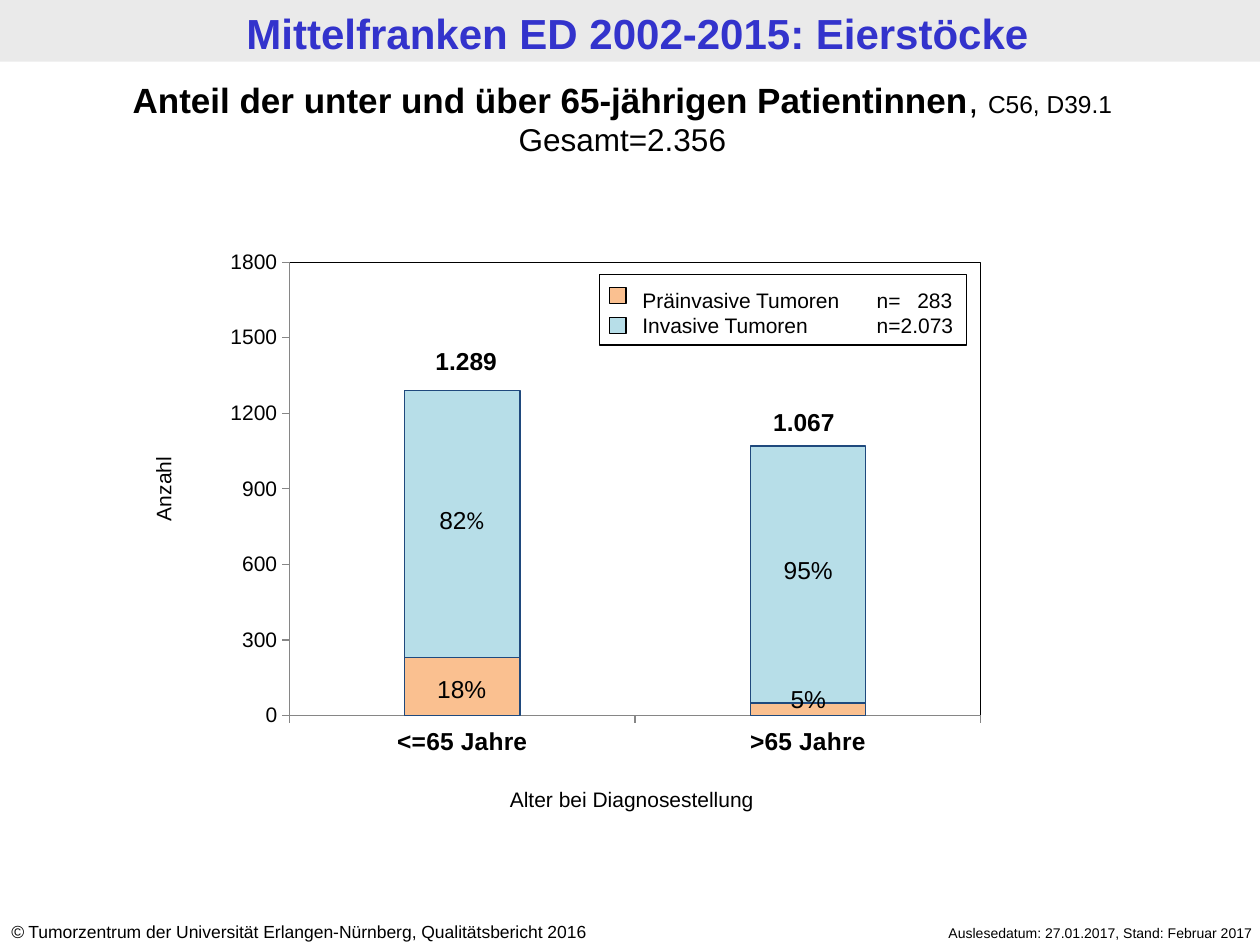
from dataclasses import dataclass

from pptx import Presentation
from pptx import util as u
from pptx.chart.data import CategoryChartData
from pptx.dml.color import RGBColor
from pptx.enum import chart, shapes, text
from pptx.oxml import parse_xml
from pptx.oxml.ns import nsdecls, qn

LEFT, CENTER, RIGHT = text.PP_ALIGN.LEFT, text.PP_ALIGN.CENTER, text.PP_ALIGN.RIGHT


@dataclass(frozen=True)
class Theme:
    font: str = "Arial"
    chart_font: str = "Calibri"
    ink: str = "000000"
    title: str = "3333CC"
    band: str = "EAEAEA"
    axis: str = "868686"
    bar_line: str = "1F497D"
    preinvasive: str = "FAC090"
    invasive: str = "B7DEE8"
    title_size: int = 24
    heading_size: int = 20
    total_size: int = 18
    label_size: int = 14
    small_size: int = 12
    footer_size: int = 10
    date_size: int = 8
    line_width: float = 0.75


class SlideBuilder:
    def __init__(self, slide, theme):
        self.slide, self.theme = slide, theme

    @staticmethod
    def inches(*lengths):
        return [u.Inches(length) for length in lengths]

    def outline(self, line, color):
        line.color.rgb = RGBColor.from_string(color)
        line.width = u.Pt(self.theme.line_width)

    def style_font(self, font, size, color=None, bold=False, italic=False, name=None):
        font.name = name or self.theme.font
        font.size = u.Pt(size)
        font.bold, font.italic = bold, italic
        font.color.rgb = RGBColor.from_string(color or self.theme.ink)

    def box(self, *place, fill=None, line=None):
        rect = self.slide.shapes.add_shape(shapes.MSO_SHAPE.RECTANGLE, *self.inches(*place))
        rect.shadow.inherit = False
        if fill:
            rect.fill.solid()
            rect.fill.fore_color.rgb = RGBColor.from_string(fill)
        else:
            rect.fill.background()
        if line:
            self.outline(rect.line, line)
        else:
            rect.line.fill.background()

    def text(self, place, paragraphs, align=CENTER, rotation=0, tabs=()):
        """Each paragraph is a list of (words, font options) runs."""
        holder = self.slide.shapes.add_textbox(*self.inches(*place))
        holder.rotation = rotation
        frame = holder.text_frame
        frame.word_wrap = True
        frame.auto_size = text.MSO_AUTO_SIZE.SHAPE_TO_FIT_TEXT
        for index, runs in enumerate(paragraphs):
            paragraph = frame.add_paragraph() if index else frame.paragraphs[0]
            paragraph.alignment = align
            if tabs:
                stops = "".join(f'<a:tab pos="{u.Inches(at)}" algn="{side}"/>' for at, side in tabs)
                paragraph._p.get_or_add_pPr().append(
                    parse_xml(f'<a:tabLst {nsdecls("a")}>{stops}</a:tabLst>'))
            for words, options in runs:
                run = paragraph.add_run()
                run.text = words
                self.style_font(run.font, **options)

    def stacked_columns(self, place, categories, series, maximum, step, layout):
        data = CategoryChartData()
        data.categories = categories
        for name, values, _ in series:
            data.add_series(name, values)
        columns = self.slide.shapes.add_chart(
            chart.XL_CHART_TYPE.COLUMN_STACKED, *self.inches(*place), data).chart
        columns.has_legend = columns.has_title = False
        self.style_font(columns.font, self.theme.total_size, name=self.theme.chart_font)

        plot = columns.plots[0]
        plot.gap_width, plot.overlap = 200, 100
        plot.vary_by_categories = False
        for bars, (_, _, color) in zip(plot.series, series):
            bars.format.fill.solid()
            bars.format.fill.fore_color.rgb = RGBColor.from_string(color)
            self.outline(bars.format.line, self.theme.bar_line)

        ages, counts = columns.category_axis, columns.value_axis
        for axis, size, bold in ((ages, self.theme.label_size, True),
                                 (counts, self.theme.small_size, False)):
            axis.has_major_gridlines = False
            axis.major_tick_mark = chart.XL_TICK_MARK.OUTSIDE
            axis.minor_tick_mark = chart.XL_TICK_MARK.NONE
            self.outline(axis.format.line, self.theme.axis)
            self.style_font(axis.tick_labels.font, size, bold=bold)
        counts.minimum_scale, counts.maximum_scale, counts.major_unit = 0, maximum, step
        counts.tick_labels.number_format = "0"
        counts.tick_labels.number_format_is_linked = False
        self.frame_plot(columns, layout)

    def frame_plot(self, columns, layout):
        """Fix the inner plot area and give it a border."""
        area = columns._chartSpace.find(".//" + qn("c:plotArea"))
        for old in area.findall(qn("c:layout")):
            area.remove(old)
        sizes = "".join(f'<c:{key} val="{value}"/>' for key, value in zip("xywh", layout))
        area.insert(0, parse_xml(
            f'<c:layout {nsdecls("c")}><c:manualLayout><c:layoutTarget val="inner"/>'
            f'<c:xMode val="edge"/><c:yMode val="edge"/>{sizes}</c:manualLayout></c:layout>'))
        area.append(parse_xml(
            f'<c:spPr {nsdecls("c", "a")}><a:noFill/><a:ln w="{u.Pt(self.theme.line_width)}">'
            f'<a:solidFill><a:srgbClr val="{self.theme.ink}"/></a:solidFill></a:ln></c:spPr>'))


def main():
    deck = Presentation()
    deck.slide_width, deck.slide_height = u.Inches(10), u.Inches(7.5)
    theme = Theme()
    page = SlideBuilder(deck.slides.add_slide(deck.slide_layouts[6]), theme)
    label, small = {"size": theme.label_size}, {"size": theme.small_size}
    total = {"size": theme.label_size, "bold": True}
    footer = {"size": theme.footer_size}

    # Title band and footer
    page.box(0, 0, 10, 0.49, fill=theme.band)
    page.text((0.06, 0.01, 10, 0.49), [[("Mittelfranken ED 2002-2015: Eierstöcke", {
        "size": theme.title_size, "color": theme.title, "bold": True})]])
    page.text((-0.01, 7.26, 5.24, 0.27), [[
        ("©", {**footer, "italic": True}),
        (" Tumorzentrum der Universität Erlangen-Nürnberg, Qualitätsbericht 2016", footer),
    ]], LEFT)
    page.text((6.65, 7.29, 3.39, 0.24), [[
        ("Auslesedatum: 27.01.2017, Stand: Februar 2017", {"size": theme.date_size})]], RIGHT)

    # Chart
    page.stacked_columns(
        (1.51, 1.42, 6.98, 4.66), ["<=65 Jahre", ">65 Jahre"],
        [("Präinvasive Tumoren", (230, 50), theme.preinvasive),
         ("Invasive Tumoren", (1060, 1020), theme.invasive)],
        maximum=1800, step=300, layout=(0.113, 0.142, 0.786, 0.772))

    # Heading
    page.text((0, 0.57, 9.88, 0.74), [
        [("Anteil der unter und über 65-jährigen Patientinnen",
          {"size": theme.heading_size, "bold": True}),
         (", ", {"size": theme.heading_size}),
         ("C56, D39.1", label)],
        [("Gesamt=2.356", {"size": theme.total_size})],
    ])

    # Axis titles
    page.text((3.35, 6.19, 3.33, 0.3), [[("Alter bei Diagnosestellung", small)]])
    page.text((-0.01, 3.73, 2.61, 0.3), [[("Anzahl", small)]], rotation=270)

    # Column totals and shares
    for left, top, words in ((3.19, 2.7, "1.289"), (5.87, 3.18, "1.067")):
        page.text((left, top, 1.02, 0.34), [[(words, total)]])
    percent = ("%", {**label, "name": theme.chart_font})
    for left, top, runs in ((3.19, 3.96, [("82", label), percent]),
                            (5.94, 4.36, [("95%", label)]),
                            (3.19, 5.3, [("18%", label)]),
                            (5.94, 5.38, [("5%", label)])):
        page.text((left, top, 0.95, 0.34), [runs])

    # Legend
    page.text((5, 2.23, 2.68, 0.5),
              [[("Präinvasive Tumoren\tn=\t283", small)],
               [("Invasive Tumoren \t\tn=\t2.073", small)]],
              LEFT, tabs=((1.47, "l"), (1.86, "l"), (2.46, "r"), (4.41, "l")))
    page.box(4.76, 2.18, 2.91, 0.56, line=theme.ink)
    for top, color in ((2.28, theme.preinvasive), (2.52, theme.invasive)):
        page.box(4.84, top, 0.13, 0.13, fill=color, line=theme.ink)

    deck.save("out.pptx")


if __name__ == "__main__":
    main()
